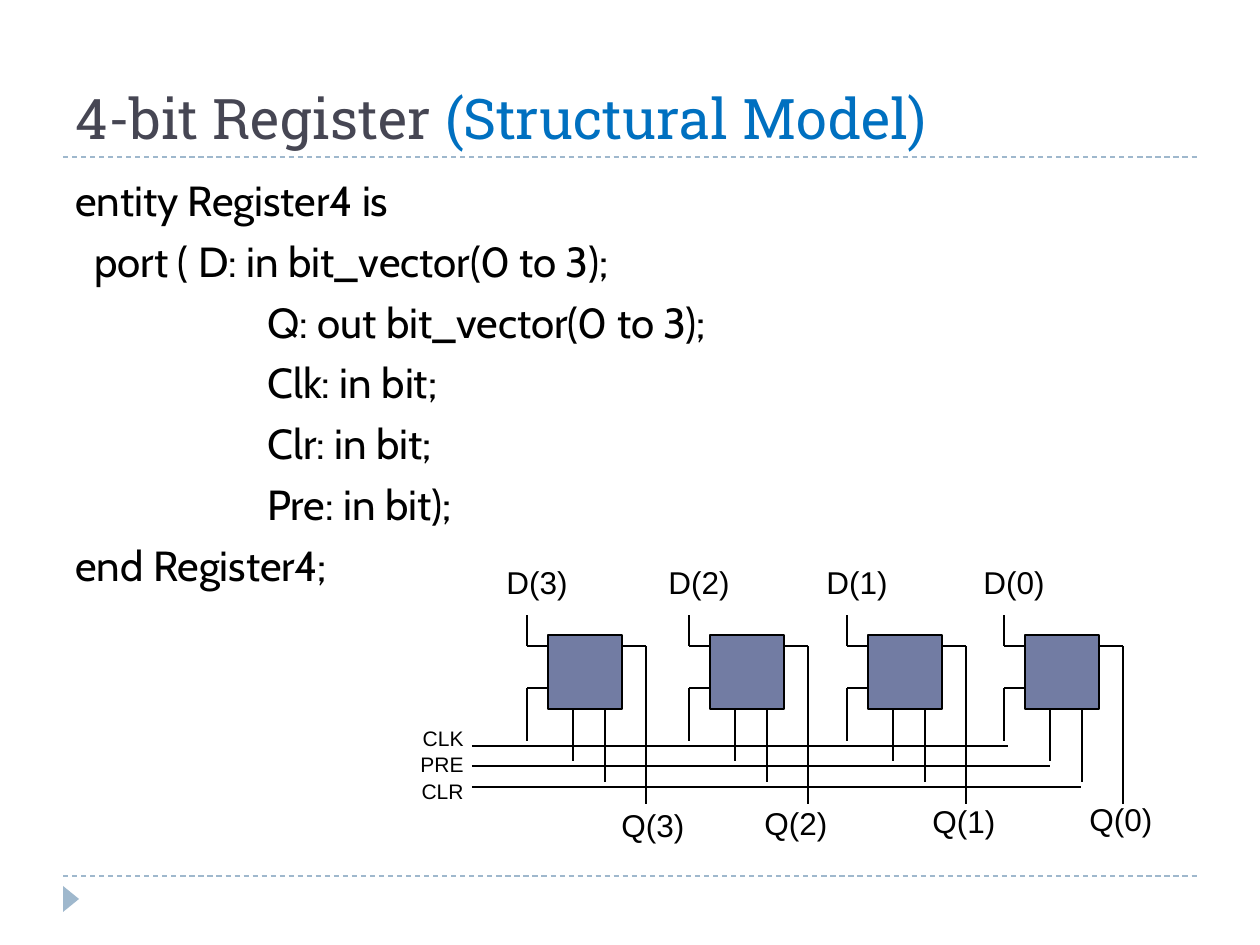
import dataclasses
import typing

import lxml.etree
import pptx
import pptx.dml.color
import pptx.enum.dml
import pptx.enum.shapes
import pptx.enum.text
import pptx.oxml.ns
import pptx.slide
import pptx.util

EMU_PER_PX = 914400 / 126
SHAPES = pptx.enum.shapes.MSO_SHAPE
ALIGN = pptx.enum.text.PP_ALIGN
ANCHOR = pptx.enum.text.MSO_ANCHOR
AUTO_SIZE = pptx.enum.text.MSO_AUTO_SIZE


@dataclasses.dataclass(frozen=True)
class Theme:
    title: str = "464653"
    accent: str = "0070C0"
    text: str = "000000"
    block: str = "727CA3"
    trim: str = "9FB8CD"
    title_font: str = "Roboto Slab"
    code_font: str = "Cabin"
    label_font: str = "Arial"
    title_size: int = 32
    code_size: int = 24
    label_size: int = 18
    bus_size: int = 12
    line_width: float = 0.75


@dataclasses.dataclass(frozen=True)
class CodeLine:
    text: str
    indent: int = 0


@dataclasses.dataclass(frozen=True)
class FlipFlop:
    bit: int
    left: int
    output_left: int
    output_top: int


@dataclasses.dataclass(frozen=True)
class Bus:
    name: str
    right: int
    y: int


THEME = Theme()
CODE = [
    CodeLine("entity Register4 is"),
    CodeLine("port ( D: in bit_vector(0 to 3);", 19),
    CodeLine("Q: out bit_vector(0 to 3);", 192),
    CodeLine("Clk: in bit;", 192),
    CodeLine("Clr: in bit;", 192),
    CodeLine("Pre: in bit);", 192),
    CodeLine("end Register4;"),
]
FLIP_FLOPS = [
    FlipFlop(3, 548, 609, 800),
    FlipFlop(2, 710, 752, 798),
    FlipFlop(1, 868, 920, 796),
    FlipFlop(0, 1025, 1077, 794),
]
BUSES = [Bus("CLK", 1008, 746), Bus("PRE", 1050, 766), Bus("CLR", 1081, 787)]
BUS_LEFT = 472
BLOCK_TOP = 635
BLOCK_SIZE = 74
WIRES = [
    (-21, 646, -21, 615),
    (-21, 646, 0, 646),
    (0, 688, -21, 688),
    (-21, 688, -21, 741),
    (25, 709, 25, 761),
    (57, 709, 57, 782),
    (73, 646, 98, 646),
    (98, 646, 98, 804),
]


def px(length: int) -> pptx.util.Emu:
    return pptx.util.Emu(round(length * EMU_PER_PX))


def rgb(color: str) -> pptx.dml.color.RGBColor:
    return pptx.dml.color.RGBColor.from_string(color)


def apply(target: typing.Any, values: dict[str, typing.Any]) -> None:
    for name, value in values.items():
        setattr(target, name, value)


def add_span(para: typing.Any, text: str, font: str, size: int, color: str) -> None:
    span = para.add_run()
    span.text = text
    apply(span.font, {"name": font, "size": pptx.util.Pt(size)})
    span.font.color.rgb = rgb(color)


def add_line(shapes: typing.Any, points: tuple[int, int, int, int],
             color: str = THEME.text, dashed: bool = False) -> None:
    line = shapes.add_connector(
        pptx.enum.shapes.MSO_CONNECTOR.STRAIGHT, *map(px, points))
    line.line.color.rgb = rgb(color)
    line.line.width = pptx.util.Pt(THEME.line_width)
    if dashed:
        line.line.dash_style = pptx.enum.dml.MSO_LINE.DASH
    lxml.etree.SubElement(line._element.spPr, pptx.oxml.ns.qn("a:effectLst"))


def add_filled(shapes: typing.Any, kind: SHAPES, bounds: tuple[int, int, int, int],
               color: str) -> typing.Any:
    shape = shapes.add_shape(kind, *map(px, bounds))
    shape.shadow.inherit = False
    shape.fill.solid()
    shape.fill.fore_color.rgb = rgb(color)
    return shape


def add_labels(shapes: typing.Any, bounds: tuple[int, int, int, int], texts: list[str],
               size: int, para_format: dict[str, typing.Any]) -> None:
    box = shapes.add_textbox(*map(px, bounds))
    frame = box.text_frame
    apply(frame, {"word_wrap": False, "auto_size": AUTO_SIZE.SHAPE_TO_FIT_TEXT})
    for number, text in enumerate(texts):
        para = frame.add_paragraph() if number else frame.paragraphs[0]
        apply(para, para_format)
        add_span(para, text, THEME.label_font, size, THEME.text)


def add_title(page: pptx.slide.Slide) -> None:
    title = page.shapes.title
    apply(title, {"left": px(63), "top": px(21), "width": px(1134), "height": px(136)})
    apply(title.text_frame, {"vertical_anchor": ANCHOR.BOTTOM, "word_wrap": True,
                             "auto_size": AUTO_SIZE.NONE})
    para = title.text_frame.paragraphs[0]
    para.alignment = ALIGN.LEFT
    for text, color in [("4-bit Register ", THEME.title),
                        ("(Structural Model)", THEME.accent)]:
        add_span(para, text, THEME.title_font, THEME.title_size, color)


def add_code(page: pptx.slide.Slide) -> None:
    box = page.shapes.add_textbox(px(63), px(168), px(1134), px(680))
    box.text_frame.word_wrap = True
    for number, line in enumerate(CODE):
        para = box.text_frame.add_paragraph() if number else box.text_frame.paragraphs[0]
        para.space_before = pptx.util.Pt(6)
        para._p.get_or_add_pPr().set("marL", str(px(line.indent)))
        add_span(para, line.text, THEME.code_font, THEME.code_size, THEME.text)


def add_flip_flop(page: pptx.slide.Slide, flip_flop: FlipFlop) -> None:
    left = flip_flop.left
    shapes = page.shapes.add_group_shape().shapes
    block = add_filled(shapes, SHAPES.RECTANGLE,
                       (left, BLOCK_TOP, BLOCK_SIZE, BLOCK_SIZE), THEME.block)
    block.line.color.rgb = rgb(THEME.text)
    block.line.width = pptx.util.Pt(THEME.line_width)
    for x1, y1, x2, y2 in WIRES:
        add_line(shapes, (left + x1, y1, left + x2, y2))
    add_labels(shapes, (left - 54, 557, 87, 50), [f"D({flip_flop.bit})"],
               THEME.label_size, {"alignment": ALIGN.LEFT})
    add_labels(page.shapes, (flip_flop.output_left, flip_flop.output_top, 88, 50),
               [f"Q({flip_flop.bit})"], THEME.label_size, {"alignment": ALIGN.LEFT})


def main() -> None:
    deck = pptx.Presentation()
    apply(deck, {"slide_width": px(1260), "slide_height": px(945)})
    page = deck.slides.add_slide(deck.slide_layouts.get_by_name("Title Only"))
    for y in (876, 157):
        add_line(page.shapes, (63, y, 1197, y), THEME.trim, dashed=True)
    marker = add_filled(page.shapes, SHAPES.ISOSCELES_TRIANGLE, (58, 891, 26, 16),
                        THEME.trim)
    marker.rotation = 90
    marker.line.fill.background()
    add_title(page)
    add_code(page)
    for flip_flop in FLIP_FLOPS:
        add_flip_flop(page, flip_flop)
    for bus in BUSES:
        add_line(page.shapes, (BUS_LEFT, bus.y, bus.right, bus.y))
    add_labels(page.shapes, (408, 718, 68, 88), [bus.name for bus in BUSES],
               THEME.bus_size, {"alignment": ALIGN.RIGHT, "line_spacing": 1.05})
    deck.save("out.pptx")


if __name__ == "__main__":
    main()
